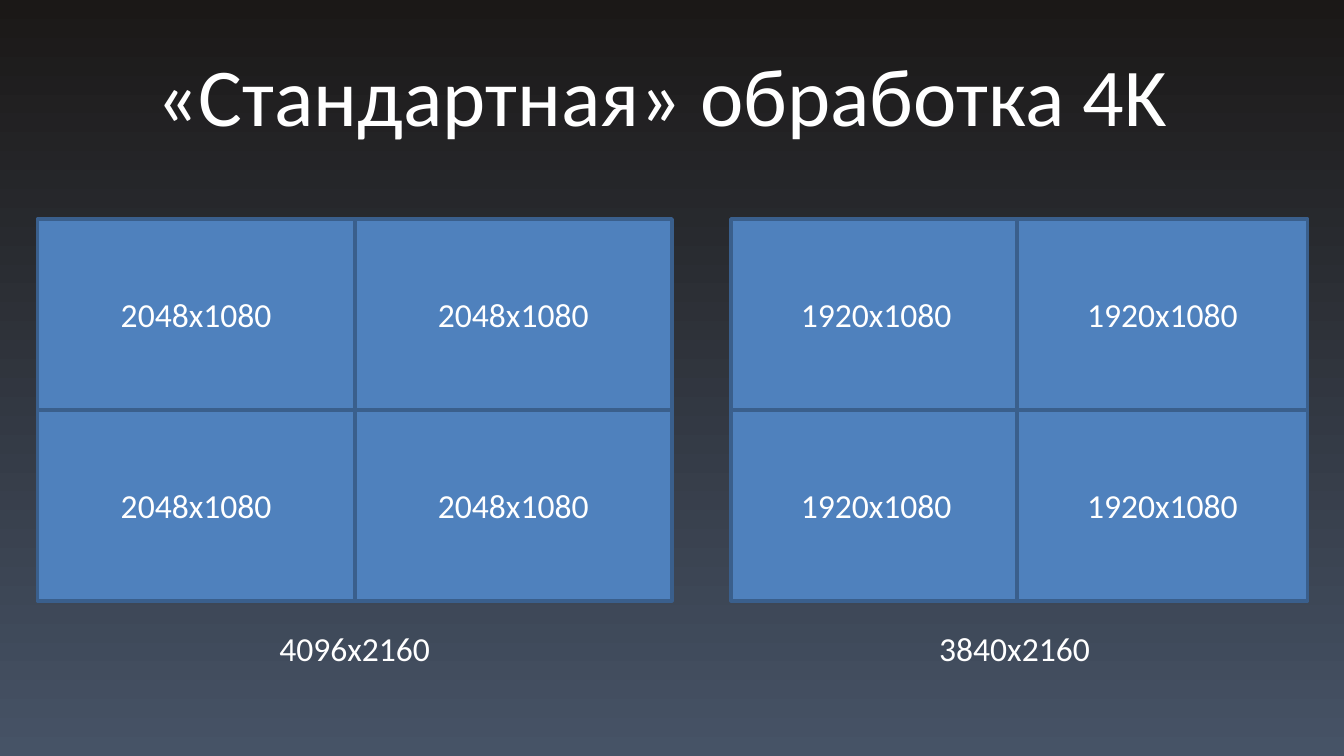
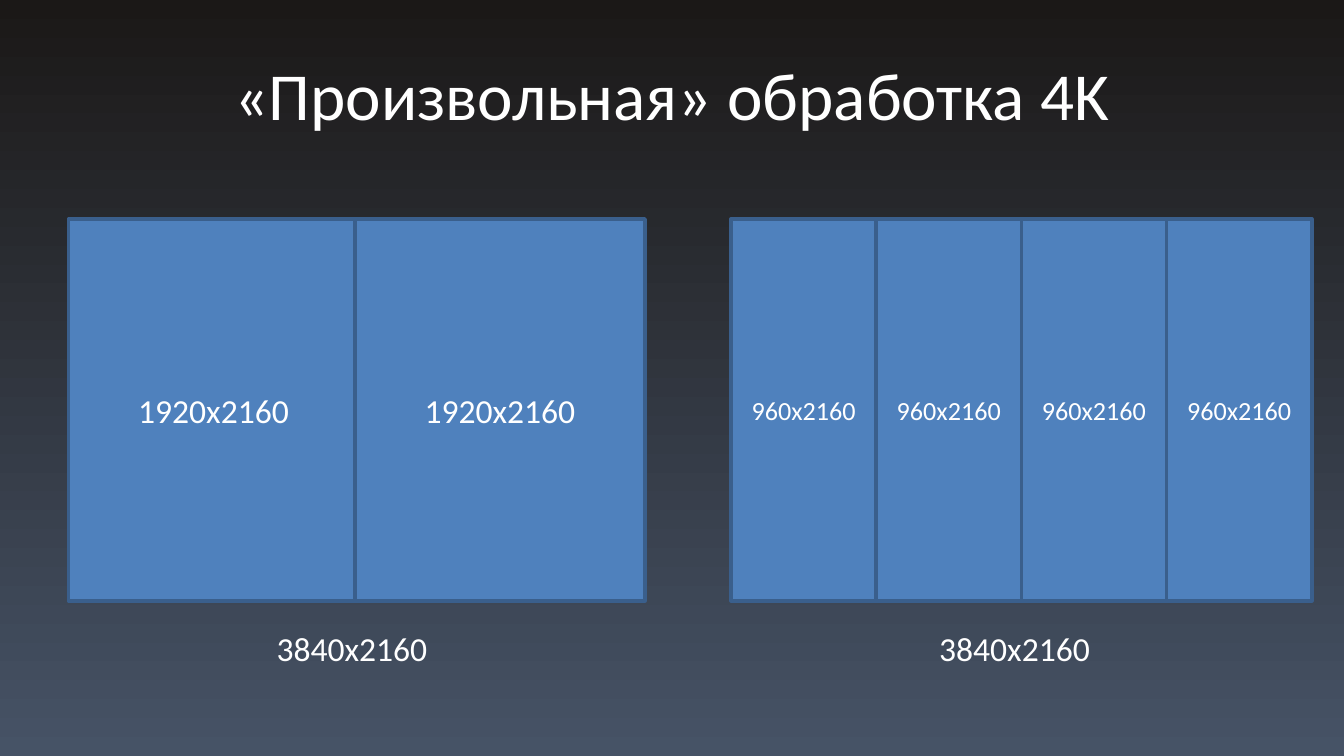
from itertools import product

from pptx import Presentation
from pptx.dml.color import RGBColor
from pptx.enum.shapes import MSO_SHAPE
from pptx.enum.text import MSO_ANCHOR, MSO_AUTO_SIZE, PP_ALIGN
from pptx.util import Inches, Pt

FONT, WHITE = "Calibri", "FFFFFF"
FRAME_FILL, FRAME_LINE = "4F81BD", "3A5F8C"
BG_TOP, BG_BOTTOM = "1B1817", "465366"
PANEL_TOP, PANEL_H = 1.63, 2.84
CAPTION_TOP, CAPTION_W, CAPTION_H = 4.62, 1.33, 0.4

# Panel: left, column step, tile width, columns, rows, tile label, label size,
# caption left, caption
SLIDES = [
    ("«Стандартная» обработка 4K ", 44, [
        (0.28, 2.36, 2.36, 2, 2, "2048x1080", 18, 1.98, "4096x2160"),
        (5.44, 2.13, 2.16, 2, 2, "1920x1080", 18, 6.89, "3840x2160"),
    ]),
    ("«Произвольная» обработка 4K", 36, [
        (0.51, 2.13, 2.16, 2, 1, "1920x2160", 18, 1.96, "3840x2160"),
        (5.44, 1.08, 1.08, 4, 1, "960x2160", 14, 6.89, "3840x2160"),
    ]),
]


def rgb(hex_color):
    return RGBColor.from_string(hex_color)


def write(tf, text, size, align):
    p = tf.paragraphs[0]
    p.text, p.alignment = text, align
    p.font.name, p.font.size = FONT, Pt(size)
    p.font.color.rgb = rgb(WHITE)


prs = Presentation()
prs.slide_width = Inches(10)
prs.slide_height = prs.slide_width * 9 // 16

# Shared background and title position
bg = prs.slide_master.background.fill
bg.gradient()
bg.gradient_angle = 270
for stop, color, position in zip(bg.gradient_stops, (BG_TOP, BG_BOTTOM), (0, 1)):
    stop.color.rgb, stop.position = rgb(color), position

layout = prs.slide_layouts.get_by_name("Title Only")
title = layout.placeholders[0]
title.left, title.top = Inches(0.5), Inches(0.23)
title.width, title.height = Inches(9), Inches(0.94)

for heading, heading_size, panels in SLIDES:
    s = prs.slides.add_slide(layout)
    tf = s.shapes.title.text_frame
    tf.auto_size = MSO_AUTO_SIZE.NONE
    tf.vertical_anchor = MSO_ANCHOR.MIDDLE
    write(tf, heading, heading_size, PP_ALIGN.CENTER)

    for left, step, width, cols, rows, label, size, caption_left, caption in panels:
        height = PANEL_H / rows
        for row, col in product(range(rows), range(cols)):
            sp = s.shapes.add_shape(
                MSO_SHAPE.RECTANGLE,
                Inches(left + col * step), Inches(PANEL_TOP + row * height),
                Inches(width), Inches(height))
            sp.shadow.inherit = False
            sp.fill.solid()
            sp.fill.fore_color.rgb = rgb(FRAME_FILL)
            sp.line.color.rgb = rgb(FRAME_LINE)
            sp.line.width = Pt(2)
            sp.text_frame.vertical_anchor = MSO_ANCHOR.MIDDLE
            write(sp.text_frame, label, size, PP_ALIGN.CENTER)

        tf = s.shapes.add_textbox(
            Inches(caption_left), Inches(CAPTION_TOP),
            Inches(CAPTION_W), Inches(CAPTION_H)).text_frame
        tf.word_wrap = False
        tf.auto_size = MSO_AUTO_SIZE.SHAPE_TO_FIT_TEXT
        write(tf, caption, 18, PP_ALIGN.LEFT)

prs.save("out.pptx")
